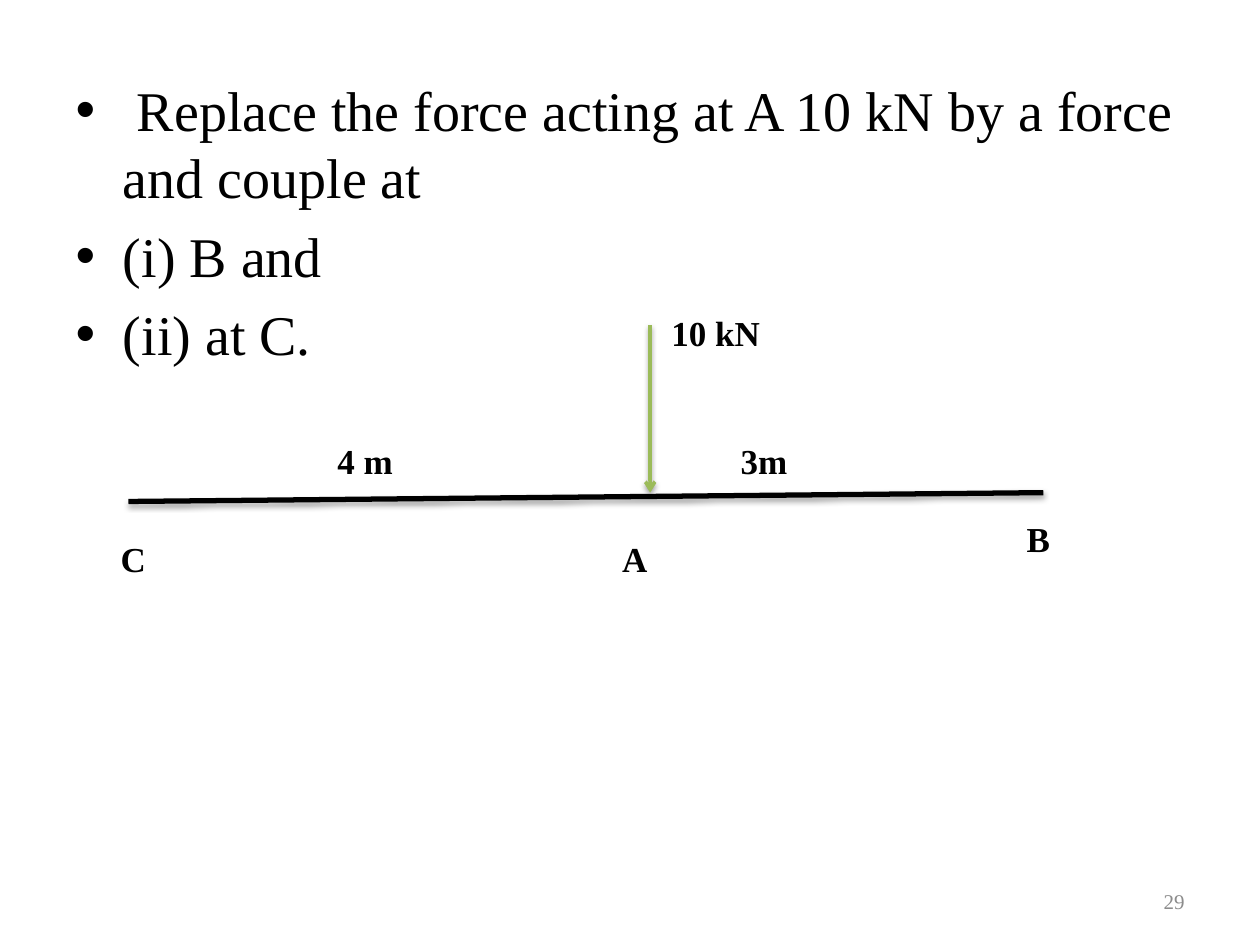
from lxml import etree
from pptx import Presentation
from pptx.dml.color import RGBColor
from pptx.enum.shapes import MSO_CONNECTOR
from pptx.enum.text import MSO_ANCHOR, PP_ALIGN
from pptx.oxml.ns import qn
from pptx.util import Inches, Pt

STRAIGHT = MSO_CONNECTOR.STRAIGHT
MIDDLE = MSO_ANCHOR.MIDDLE
LEFT, RIGHT = PP_ALIGN.LEFT, PP_ALIGN.RIGHT

BLACK = RGBColor(0x00, 0x00, 0x00)
GREEN = RGBColor(0x9B, 0xBB, 0x59)
GRAY = RGBColor(0x8C, 0x8C, 0x8C)
FONT = "Times New Roman"

TASK = [
    " Replace the force acting at A 10 kN by a force and couple at",
    "(i) B and",
    "(ii) at C.",
]
LABEL_HEIGHT = 0.44
LABELS = [  # text, left, top, width
    ("C", 0.86, 4.22, 0.47),
    ("A", 4.84, 4.22, 0.47),
    ("B", 8.05, 4.06, 0.47),
    ("4 m", 2.58, 3.44, 0.86),
    ("3m", 5.78, 3.44, 0.86),
    ("10 kN", 5.23, 2.42, 1.02),
]
BEAM = ((1.02, 3.98), (8.28, 3.91))
FORCE = ((5.16, 2.58), (5.16, 3.91))
PAGE_NUMBER = "29"


def add_run(p, text, size, color, bold=False):
    r = p.add_run()
    r.text = text
    r.font.name = FONT
    r.font.size = Pt(size)
    r.font.color.rgb = color
    r.font.bold = bold


def add_text(slide, text, box, size, color, bold=False, align=LEFT):
    tf = slide.shapes.add_textbox(*map(Inches, box)).text_frame
    tf.word_wrap = True
    p = tf.paragraphs[0]
    p.alignment = align
    add_run(p, text, size, color, bold)
    return tf


def add_line(slide, ends, color, width, opacity, distance):
    """Draw a straight line with a soft shadow straight below it."""
    start, end = ends
    line = slide.shapes.add_connector(STRAIGHT, *map(Inches, start + end))
    line.line.color.rgb = color
    line.line.width = Pt(width)
    effects = etree.SubElement(line._element.spPr, qn("a:effectLst"))
    shadow = etree.SubElement(
        effects, qn("a:outerShdw"), blurRad=str(Pt(3.1)), dist=str(Pt(distance)),
        dir=str(90 * 60000), rotWithShape="0")
    tint = etree.SubElement(shadow, qn("a:srgbClr"), val=str(BLACK))
    etree.SubElement(tint, qn("a:alpha"), val=str(opacity * 1000))
    return line


def main():
    prs = Presentation()
    prs.slide_width, prs.slide_height = Inches(10), Inches(7.5)
    slide = prs.slides.add_slide(prs.slide_layouts[1])
    title = slide.shapes.title._element
    title.getparent().remove(title)

    body = slide.placeholders[1]
    body.left, body.top = Inches(0.5), Inches(0.55)
    body.width, body.height = Inches(9), Inches(6.15)
    tf = body.text_frame
    for i, text in enumerate(TASK):
        p = tf.add_paragraph() if i else tf.paragraphs[0]
        add_run(p, text, 32, BLACK)

    number = add_text(slide, PAGE_NUMBER, (7.17, 6.95, 2.33, 0.4), 12, GRAY, align=RIGHT)
    number.vertical_anchor = MIDDLE

    add_line(slide, BEAM, BLACK, 3, opacity=35, distance=1.8)
    force = add_line(slide, FORCE, GREEN, 2, opacity=38, distance=1.6)
    etree.SubElement(force.line._get_or_add_ln(), qn("a:tailEnd"), type="arrow")

    for text, left, top, width in LABELS:
        add_text(slide, text, (left, top, width, LABEL_HEIGHT), 20, BLACK, bold=True)

    prs.save("out.pptx")


if __name__ == "__main__":
    main()
